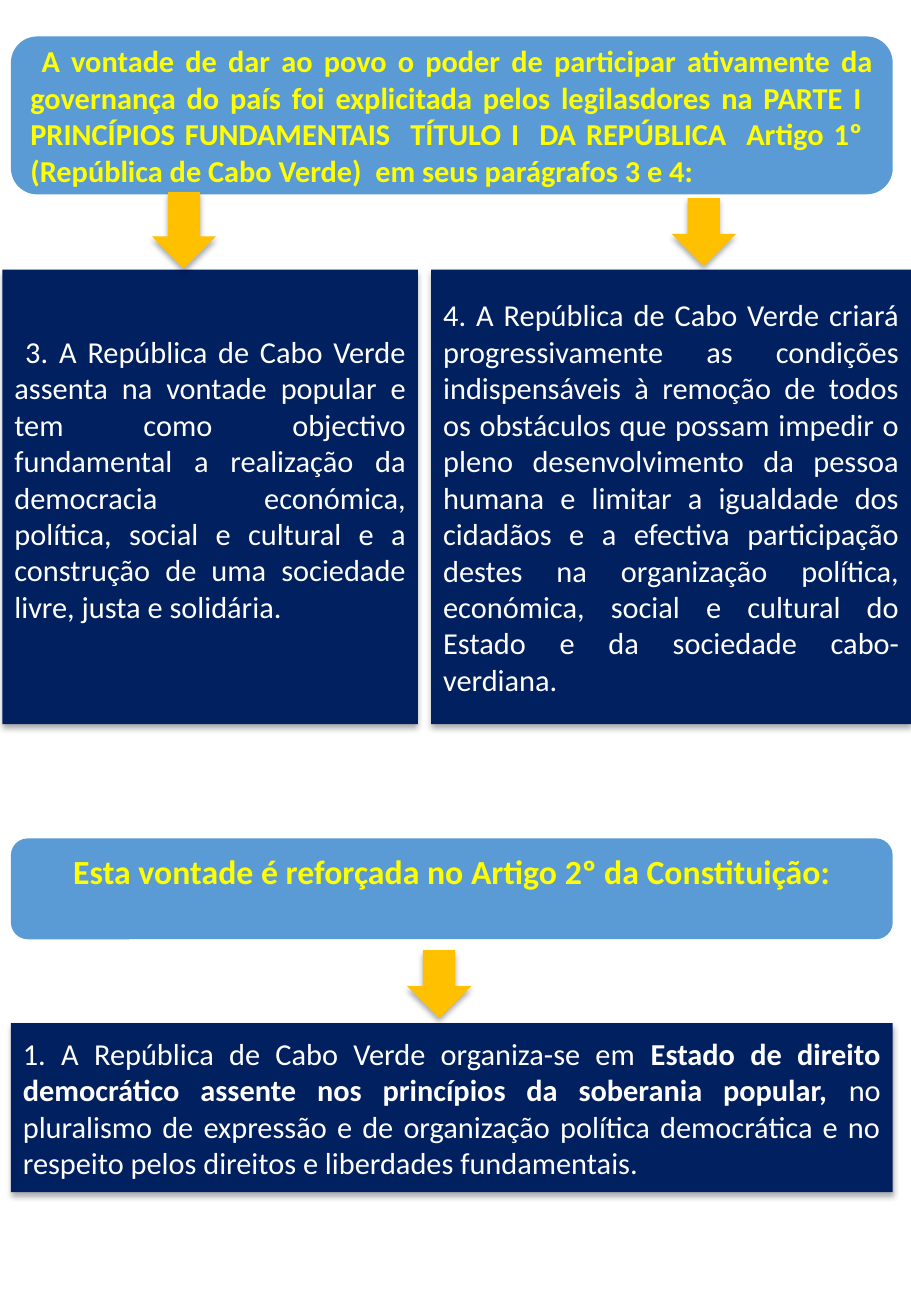
from lxml.etree import SubElement
from pptx import Presentation
from pptx.dml.color import RGBColor
from pptx.enum.shapes import MSO_SHAPE as Preset
from pptx.enum.text import MSO_ANCHOR as Anchor, MSO_AUTO_SIZE as AutoSize, PP_ALIGN as Align
from pptx.oxml.ns import qn
from pptx.util import Inches, Pt

WHITE = RGBColor(0xFF, 0xFF, 0xFF)
YELLOW = RGBColor(0xFF, 0xFF, 0x00)
BLUE = RGBColor(0x5B, 0x9B, 0xD5)
NAVY = RGBColor(0x00, 0x20, 0x60)
AMBER = RGBColor(0xFF, 0xC0, 0x00)

INTRO = [
    (" A vontade de dar ao povo o poder de participar ativamente da governança do país foi "
     "explicitada pelos legilasdores na PARTE I  PRINCÍPIOS FUNDAMENTAIS  TÍTULO I  DA REPÚBLICA  "
     "Artigo 1º  (República de Cabo Verde)  em seus parágrafos 3 e 4:", True),
]
REINFORCEMENT = [("Esta vontade é reforçada no Artigo 2º da Constituição:", True)]
PARAGRAPH_3 = [
    (" 3. A República de Cabo Verde assenta na vontade popular e tem como objectivo fundamental "
     "a realização da democracia económica, política, social e cultural e a construção de uma "
     "sociedade livre, justa e solidária.", False),
]
PARAGRAPH_4 = [
    ("4. A República de Cabo Verde criará progressivamente as condições indispensáveis à remoção "
     "de todos os obstáculos que possam impedir o pleno desenvolvimento da pessoa humana e limitar "
     "a igualdade dos cidadãos e a efectiva participação destes na organização política, económica, "
     "social e cultural do Estado e da sociedade cabo-verdiana.", False),
]
ARTICLE_2 = [
    ("1. A República de Cabo Verde organiza-se em", False),
    (" Estado de direito democrático assente nos princípios da soberania popular,", True),
    (" no pluralismo de expressão e de organização política democrática e no respeito pelos "
     "direitos e liberdades fundamentais.", False),
]

LEFT, WIDTH = 0.09, 7.26
INTRO_BOX = (LEFT, 0.3, WIDTH, 1.3)
REINFORCEMENT_BOX = (LEFT, 6.9, WIDTH, 0.83)
INSET, CORNER_INSET, SPARE_LINE = 0.1, 0.16, 0.3
ARTICLES = [
    (PARAGRAPH_3, (0.02, 2.22, 3.42, 3.74), SPARE_LINE),
    (PARAGRAPH_4, (3.55, 2.22, 3.95, 3.74), 0),
    (ARTICLE_2, (LEFT, 8.42, WIDTH, 1.39), 0),
]
ARROWS = [(1.25, 1.58, 0.53, 0.63), (5.53, 1.63, 0.53, 0.56), (3.35, 7.82, 0.53, 0.56)]


def add_block(slide, preset, box, fill, shadowed=True):
    """Add a filled shape without outline, optionally with a soft shadow."""
    block = slide.shapes.add_shape(preset, *map(Inches, box))
    block.fill.solid()
    block.fill.fore_color.rgb = fill
    block.line.fill.background()
    block.shadow.inherit = False
    if shadowed:
        effects = block.element.spPr.find(qn("a:effectLst"))
        shadow = SubElement(effects, qn("a:outerShdw"), blurRad=str(Pt(3.5)),
                            dist=str(Pt(2.2)), dir="5400000", rotWithShape="0")
        tint = SubElement(shadow, qn("a:srgbClr"), val="000000")
        SubElement(tint, qn("a:alpha"), val="32000")
    return block


def write(block, runs, color, size=18, align=Align.JUSTIFY, inset=INSET, spare=0):
    """Write formatted runs as the single paragraph of a block."""
    frame_format = {
        "word_wrap": True, "auto_size": AutoSize.NONE, "vertical_anchor": Anchor.MIDDLE,
        "margin_left": Inches(inset), "margin_right": Inches(inset),
        "margin_top": Inches(0.05), "margin_bottom": Inches(0.05 + spare),
    }
    for key, value in frame_format.items():
        setattr(block.text_frame, key, value)
    paragraph = block.text_frame.paragraphs[0]
    paragraph.alignment = align
    for wording, bold in runs:
        run = paragraph.add_run()
        run.text = wording
        for key, value in {"name": "Calibri", "size": Pt(size), "bold": bold}.items():
            setattr(run.font, key, value)
        run.font.color.rgb = color


def main():
    """Build the slide on the constitutional articles."""
    deck = Presentation()
    deck.slide_width, deck.slide_height = Inches(7.5), Inches(10.83)
    slide = deck.slides.add_slide(deck.slide_layouts[5])

    intro_band = add_block(slide, Preset.ROUNDED_RECTANGLE, INTRO_BOX, BLUE, shadowed=False)
    title = slide.shapes.title
    title.left, title.top, title.width, title.height = map(Inches, INTRO_BOX)
    intro_band.element.addnext(title.element)
    write(title, INTRO, YELLOW, inset=CORNER_INSET)

    for runs, box, spare in ARTICLES:
        write(add_block(slide, Preset.RECTANGLE, box, NAVY), runs, WHITE, spare=spare)

    reinforcement = add_block(slide, Preset.ROUNDED_RECTANGLE, REINFORCEMENT_BOX, BLUE, shadowed=False)
    write(reinforcement, REINFORCEMENT, YELLOW, size=20, align=Align.CENTER, spare=SPARE_LINE)

    for box in ARROWS:
        add_block(slide, Preset.DOWN_ARROW, box, AMBER)

    deck.save("out.pptx")


if __name__ == "__main__":
    main()
